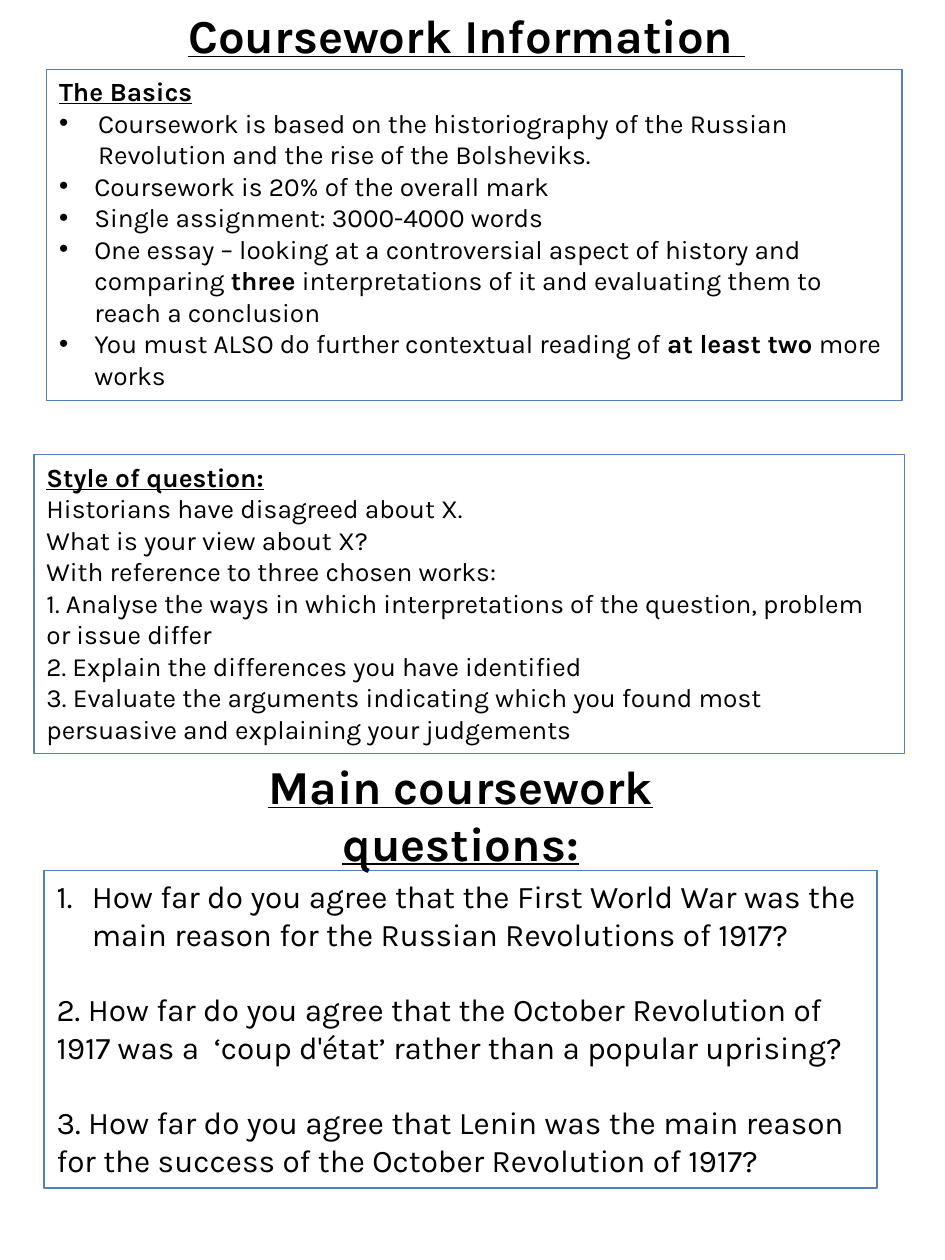
from dataclasses import dataclass

from lxml.etree import SubElement
from pptx import Presentation
from pptx.dml.color import RGBColor
from pptx.enum.shapes import MSO_SHAPE as Shape
from pptx.enum.text import MSO_ANCHOR as Anchor, MSO_AUTO_SIZE as AutoSize, PP_ALIGN as Align
from pptx.oxml.ns import qn
from pptx.util import Inches, Pt

COLS, ROWS = 75, 100


@dataclass(frozen=True)
class Theme:
    """Colours, font and type sizes of the slide."""
    font: str = "Karla"
    ink: RGBColor = RGBColor(0, 0, 0)
    border: RGBColor = RGBColor(0x4F, 0x81, 0xBD)
    border_width: float = 0.75
    heading: float = 27
    body: float = 15
    question: float = 18
    question_gap: float = 21.5


THEME = Theme()
LIST_INDENT = 2.8

BASICS = [
    (3.1, [("Coursework is based on the historiography of the Russian Revolution "
            "and the rise of the Bolsheviks.", False)]),
    (LIST_INDENT, [("Coursework is 20% of the overall mark", False)]),
    (LIST_INDENT, [("Single assignment: 3000-4000 words", False)]),
    (LIST_INDENT, [("One essay – looking at a controversial aspect of history and comparing ", False),
                   ("three", True),
                   (" interpretations of it and evaluating them to reach a conclusion", False)]),
    (LIST_INDENT, [("You must ALSO do further contextual reading of ", False),
                   ("at least two", True),
                   (" more works", False)]),
]
STYLE = [
    "Historians have disagreed about X.",
    "What is your view about X?",
    "With reference to three chosen works:",
    "1. Analyse the ways in which interpretations of the question, problem or issue differ",
    "2. Explain the differences you have identified",
    "3. Evaluate the arguments indicating which you found most persuasive "
    "and explaining your judgements",
]
QUESTIONS = [
    "How far do you agree that the First World War was the main reason "
    "for the Russian Revolutions of 1917?",
    "2. How far do you agree that the October Revolution of 1917 was a  "
    "‘coup d'état’ rather than a popular uprising?",
    "3. How far do you agree that Lenin was the main reason for the success "
    "of the October Revolution of 1917?",
]


def place(prs, col, row, cols, rows):
    """Turn grid columns and rows into left, top, width and height."""
    dx, dy = prs.slide_width / COLS, prs.slide_height / ROWS
    return round(col * dx), round(row * dy), round(cols * dx), round(rows * dy)


def add_run(p, text, size, bold=False, underline=False):
    """Add one styled run to a paragraph."""
    r = p.add_run()
    r.text = text
    r.font.name, r.font.size = THEME.font, Pt(size)
    r.font.bold, r.font.underline = bold, underline
    r.font.color.rgb = THEME.ink


def add_paragraph(tf):
    """Return the empty first paragraph, or a new one after the text."""
    p = tf.paragraphs[0]
    if p.runs:
        p = tf.add_paragraph()
    p.alignment = Align.LEFT
    return p


def set_hanging(prs, p, indent, tag, **marker):
    """Give a paragraph a hanging indent and a list marker."""
    pPr = p._p.get_or_add_pPr()
    width = round(indent * prs.slide_width / COLS)
    pPr.set("marL", str(width))
    pPr.set("indent", str(-width))
    if tag == "a:buChar":
        SubElement(pPr, qn("a:buFont"), typeface="Arial")
    SubElement(pPr, qn(tag), **marker)


def set_frame(tf):
    """Wrap text from the top and let the shape fit it."""
    tf.word_wrap = True
    tf.auto_size = AutoSize.SHAPE_TO_FIT_TEXT
    tf.vertical_anchor = Anchor.TOP


def fill_heading(sp, text):
    """Write a centred, underlined heading."""
    set_frame(sp.text_frame)
    p = sp.text_frame.paragraphs[0]
    p.alignment = Align.CENTER
    add_run(p, text, THEME.heading, True, True)


def add_panel(prs, s, area, title=None):
    """Add an outlined panel with an optional title and return its text frame."""
    sp = s.shapes.add_shape(Shape.RECTANGLE, *place(prs, *area))
    sp.shadow.inherit = False
    sp.fill.background()
    sp.line.color.rgb, sp.line.width = THEME.border, Pt(THEME.border_width)
    tf = sp.text_frame
    set_frame(tf)
    if title:
        add_run(add_paragraph(tf), title, THEME.body, True, True)
    return tf


def add_basics(prs, s):
    """Add the bulleted panel of basic facts."""
    tf = add_panel(prs, s, (3.7, 5.5, 67.9, 26.3), "The Basics")
    for indent, runs in BASICS:
        p = add_paragraph(tf)
        set_hanging(prs, p, indent, "a:buChar", char="•")
        for text, bold in runs:
            add_run(p, text, THEME.body, bold)


def add_style(prs, s):
    """Add the panel on the style of question."""
    tf = add_panel(prs, s, (2.7, 36.1, 69.1, 23.7), "Style of question:")
    for text in STYLE:
        add_run(add_paragraph(tf), text, THEME.body)


def add_questions(prs, s):
    """Add the panel of main questions."""
    tf = add_panel(prs, s, (3.5, 69.1, 66.1, 25.2))
    for i, text in enumerate(QUESTIONS):
        p = add_paragraph(tf)
        if i:
            p.space_before = Pt(THEME.question_gap)
        else:
            set_hanging(prs, p, LIST_INDENT, "a:buAutoNum", type="arabicPeriod")
        add_run(p, text, THEME.question)


def main():
    """Build and save the slide."""
    prs = Presentation()
    prs.slide_width, prs.slide_height = Inches(7.5), Inches(10)
    s = prs.slides.add_slide(prs.slide_layouts[5])
    title = s.shapes.title
    title.left, title.top, title.width, title.height = place(prs, 2.5, 0, 69.1, 5.6)
    fill_heading(title, "Coursework Information ")
    add_basics(prs, s)
    add_style(prs, s)
    add_questions(prs, s)
    box = s.shapes.add_textbox(*place(prs, 10.9, 59.6, 51.3, 5.6))
    fill_heading(box, "Main coursework questions:")
    prs.save("out.pptx")


if __name__ == "__main__":
    main()
